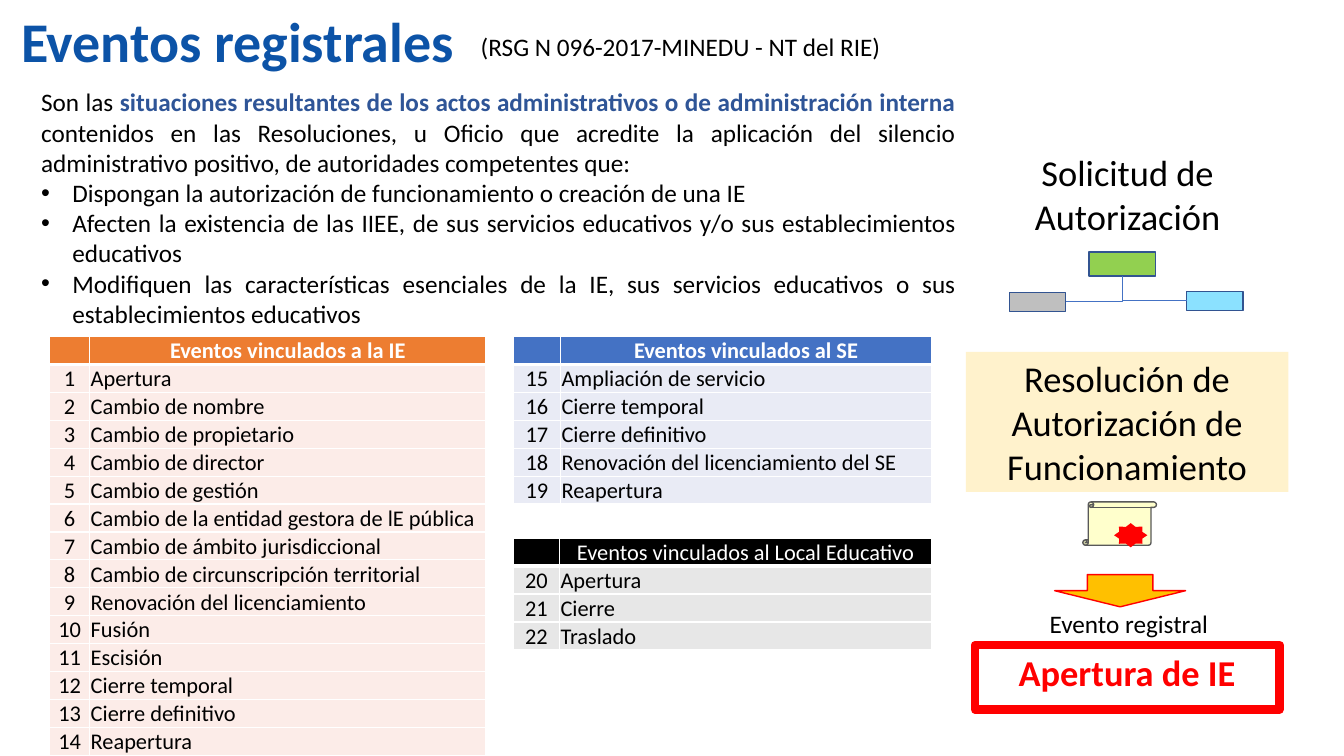
"""Build the slide on registry events of educational institutions."""
from dataclasses import dataclass

from lxml import etree
from pptx import Presentation
from pptx.dml.color import RGBColor
from pptx.enum.shapes import MSO_CONNECTOR, MSO_SHAPE
from pptx.enum.text import MSO_ANCHOR, PP_ALIGN
from pptx.oxml.ns import qn
from pptx.util import Inches, Pt

LEFT, CENTER, JUSTIFY = PP_ALIGN.LEFT, PP_ALIGN.CENTER, PP_ALIGN.JUSTIFY
TOP, MIDDLE, BOTTOM = MSO_ANCHOR.TOP, MSO_ANCHOR.MIDDLE, MSO_ANCHOR.BOTTOM
RECTANGLE, SCROLL = MSO_SHAPE.RECTANGLE, MSO_SHAPE.VERTICAL_SCROLL
STAR, ARROW = MSO_SHAPE.STAR_8_POINT, MSO_SHAPE.DOWN_ARROW
ELBOW = MSO_CONNECTOR.ELBOW
SIDE_BOTTOM, SIDE_LEFT, SIDE_RIGHT = 2, 1, 3


@dataclass(frozen=True)
class Theme:
    """Colours, font and type sizes of the slide."""
    font: str = "Calibri"
    title_size: int = 40
    step_size: int = 26
    body_size: int = 18
    table_size: int = 16
    title: str = "0C53A7"
    emphasis: str = "2F5597"
    black: str = "000000"
    white: str = "FFFFFF"
    red: str = "FF0000"
    orange: str = "ED7D31"
    pale_orange: str = "FCECE8"
    blue: str = "4472C4"
    pale_blue: str = "E9EBF5"
    pale_grey: str = "E7E7E7"
    box_line: str = "325491"
    green: str = "92D050"
    cyan: str = "8BE1FF"
    grey: str = "BFBFBF"
    cream: str = "FFF2CC"
    parchment: str = "FFFFCC"
    scroll_line: str = "595959"
    amber: str = "FFC000"


THEME = Theme()

TITLE = "Eventos registrales"
REFERENCE = "(RSG N 096-2017-MINEDU - NT del RIE)"
DEFINITION = [
    ("Son las ", THEME.black, False),
    ("situaciones resultantes de los actos administrativos o de administración interna",
     THEME.emphasis, True),
    (" contenidos en las Resoluciones, u Oficio que acredite la aplicación del silencio "
     "administrativo positivo, de autoridades competentes que:", THEME.black, False),
]
BULLETS = [
    "Dispongan la autorización de funcionamiento o creación de una IE",
    "Afecten la existencia de las IIEE, de sus servicios educativos y/o sus "
    "establecimientos educativos",
    "Modifiquen las características esenciales de la IE, sus servicios educativos o sus "
    "establecimientos educativos",
]
EVENT_TABLES = [
    {"heading": "Eventos vinculados a la IE", "bold": True, "first": 1,
     "at": (0.49, 3.34), "columns": (0.4, 3.93),
     "fills": (THEME.orange, THEME.pale_orange),
     "events": ["Apertura", "Cambio de nombre", "Cambio de propietario", "Cambio de director",
                "Cambio de gestión", "Cambio de la entidad gestora de lE pública",
                "Cambio de ámbito jurisdiccional", "Cambio de circunscripción territorial",
                "Renovación del licenciamiento", "Fusión", "Escisión", "Cierre temporal",
                "Cierre definitivo", "Reapertura"]},
    {"heading": "Eventos vinculados al SE", "bold": True, "first": 15,
     "at": (5.09, 3.34), "columns": (0.47, 3.68),
     "fills": (THEME.blue, THEME.pale_blue),
     "events": ["Ampliación de servicio", "Cierre temporal", "Cierre definitivo",
                "Renovación del licenciamiento del SE", "Reapertura"]},
    {"heading": "Eventos vinculados al Local Educativo", "bold": False, "first": 20,
     "at": (5.09, 5.34), "columns": (0.46, 3.69),
     "fills": (THEME.black, THEME.pale_grey),
     "events": ["Apertura", "Cierre", "Traslado"]},
]
ROW_HEIGHT = 4.12 / 15
ORGANIGRAM_TOP = ((10.8, 2.5, 0.66, 0.24), THEME.green)
ORGANIGRAM_SIDES = [
    ((10.01, 2.9, 0.56, 0.19), THEME.grey, SIDE_RIGHT),
    ((11.77, 2.89, 0.56, 0.19), THEME.cyan, SIDE_LEFT),
]


def add_run(paragraph, text, size, color=THEME.black, bold=False):
    """Append one formatted run."""
    run = paragraph.add_run()
    run.text = text
    run.font.name, run.font.size, run.font.bold = THEME.font, Pt(size), bold
    run.font.color.rgb = RGBColor.from_string(color)


def add_text(slide, box, text, size, align=CENTER):
    """Add a wrapped text box with one run."""
    frame = slide.shapes.add_textbox(*map(Inches, box)).text_frame
    frame.word_wrap = True
    frame.paragraphs[0].alignment = align
    add_run(frame.paragraphs[0], text, size)


def add_figure(slide, kind, box, fill, line=None, width=1):
    """Add a flat preset shape."""
    shape = slide.shapes.add_shape(kind, *map(Inches, box))
    shape.shadow.inherit = False
    shape.fill.solid()
    shape.fill.fore_color.rgb = RGBColor.from_string(fill)
    if line:
        shape.line.color.rgb = RGBColor.from_string(line)
        shape.line.width = Pt(width)
    else:
        shape.line.fill.background()
    return shape


def label_figure(shape, text, color, bold, anchor):
    """Write a centred step label inside a shape."""
    shape.text_frame.word_wrap = True
    shape.text_frame.vertical_anchor = anchor
    shape.text_frame.paragraphs[0].alignment = CENTER
    add_run(shape.text_frame.paragraphs[0], text, THEME.step_size, color, bold)


def add_definition(slide):
    """Add the definition and its bullets."""
    frame = slide.shapes.add_textbox(*map(Inches, (0.31, 0.81, 9.27, 2.52))).text_frame
    frame.word_wrap = True
    frame.paragraphs[0].alignment = JUSTIFY
    for text, color, bold in DEFINITION:
        add_run(frame.paragraphs[0], text, THEME.body_size, color, bold)
    for text in BULLETS:
        paragraph = frame.add_paragraph()
        paragraph.alignment = JUSTIFY
        properties = paragraph._p.get_or_add_pPr()
        properties.set("marL", str(Inches(0.31)))
        properties.set("indent", str(Inches(-0.31)))
        etree.SubElement(properties, qn("a:buFont")).set("typeface", "Arial")
        etree.SubElement(properties, qn("a:buChar")).set("char", "•")
        add_run(paragraph, text, THEME.body_size)


def format_cell(cell, text, fill, color, bold, align, bottom_width):
    """Give a cell its borders, fill and text."""
    properties = cell._tc.get_or_add_tcPr()
    for side, width in (("L", 1), ("R", 1), ("T", 1), ("B", bottom_width)):
        border = etree.SubElement(properties, qn(f"a:ln{side}"), w=str(Pt(width)))
        solid = etree.SubElement(border, qn("a:solidFill"))
        etree.SubElement(solid, qn("a:srgbClr"), val=THEME.white)
    cell.fill.solid()
    cell.fill.fore_color.rgb = RGBColor.from_string(fill)
    cell.margin_left = cell.margin_right = cell.margin_top = Inches(0.01)
    cell.margin_bottom = 0
    cell.vertical_anchor = BOTTOM
    paragraph = cell.text_frame.paragraphs[0]
    paragraph.alignment = align
    if text:
        add_run(paragraph, text, THEME.table_size, color, bold)
    else:
        etree.SubElement(paragraph._p, qn("a:endParaRPr"), sz=str(THEME.table_size * 100))


def add_event_table(slide, content):
    """Add a numbered table of events."""
    rows = [("", content["heading"])]
    rows += [(str(number), event) for number, event in enumerate(content["events"], content["first"])]
    size = (sum(content["columns"]), ROW_HEIGHT * len(rows))
    table = slide.shapes.add_table(len(rows), 2, *map(Inches, content["at"] + size)).table
    table.horz_banding = False
    for column, width in zip(table.columns, content["columns"]):
        column.width = Inches(width)
    for row_index, row in enumerate(rows):
        table.rows[row_index].height = Inches(ROW_HEIGHT)
        heading = row_index == 0
        fill = content["fills"][0 if heading else 1]
        color = THEME.white if heading else THEME.black
        for column_index, text in enumerate(row):
            align = CENTER if heading or column_index == 0 else LEFT
            format_cell(table.cell(row_index, column_index), text, fill, color,
                        heading and content["bold"], align, 3 if heading else 1)


def add_organigram(slide):
    """Add the three boxes and their elbow connectors."""
    box, fill = ORGANIGRAM_TOP
    top = add_figure(slide, RECTANGLE, box, fill, THEME.box_line)
    for box, fill, side in ORGANIGRAM_SIDES:
        shape = add_figure(slide, RECTANGLE, box, fill, THEME.box_line)
        connector = slide.shapes.add_connector(ELBOW, 0, 0, 0, 0)
        connector.begin_connect(shape, side)
        connector.end_connect(top, SIDE_BOTTOM)
        connector.line.color.rgb = RGBColor.from_string(THEME.blue)
        connector.line.width = Pt(0.5)
        properties = connector.element.spPr
        properties.find(qn("a:prstGeom")).set("prst", "bentConnector2")
        etree.SubElement(properties, qn("a:effectLst"))


def add_process(slide):
    """Add the steps from request to registry event."""
    add_text(slide, (9.85, 1.44, 2.67, 0.87), "Solicitud de Autorización", THEME.step_size)
    add_organigram(slide)
    resolution = add_figure(slide, RECTANGLE, (9.58, 3.49, 3.2, 1.39), THEME.cream)
    label_figure(resolution, "Resolución de Autorización de Funcionamiento", THEME.black, False, MIDDLE)
    add_figure(slide, SCROLL, (10.74, 4.98, 0.73, 0.43), THEME.parchment, THEME.scroll_line)
    add_figure(slide, STAR, (11.05, 5.19, 0.33, 0.24), THEME.red)
    opening = add_figure(slide, RECTANGLE, (9.67, 6.4, 3.02, 0.64), THEME.white, THEME.red, 6)
    label_figure(opening, "Apertura de IE", THEME.red, True, TOP)
    add_figure(slide, ARROW, (10.46, 5.7, 1.3, 0.32), THEME.amber, THEME.red)
    add_text(slide, (10.02, 5.99, 2.35, 0.4), "Evento registral", THEME.body_size)


def main():
    """Assemble and save the slide."""
    presentation = Presentation()
    presentation.slide_width, presentation.slide_height = Inches(13.33), Inches(7.5)
    slide = presentation.slides.add_slide(presentation.slide_layouts[5])
    title = slide.shapes.title
    title.left, title.top, title.width, title.height = map(Inches, (0, 0.01, 4.71, 0.77))
    title.text_frame.word_wrap = False
    title.text_frame.vertical_anchor = TOP
    title.text_frame.paragraphs[0].alignment = CENTER
    add_run(title.text_frame.paragraphs[0], TITLE, THEME.title_size, THEME.title, True)
    add_definition(slide)
    for content in EVENT_TABLES:
        add_event_table(slide, content)
    add_text(slide, (4.67, 0.26, 6.74, 0.4), REFERENCE, THEME.body_size, LEFT)
    add_process(slide)
    presentation.save("out.pptx")


if __name__ == "__main__":
    main()
